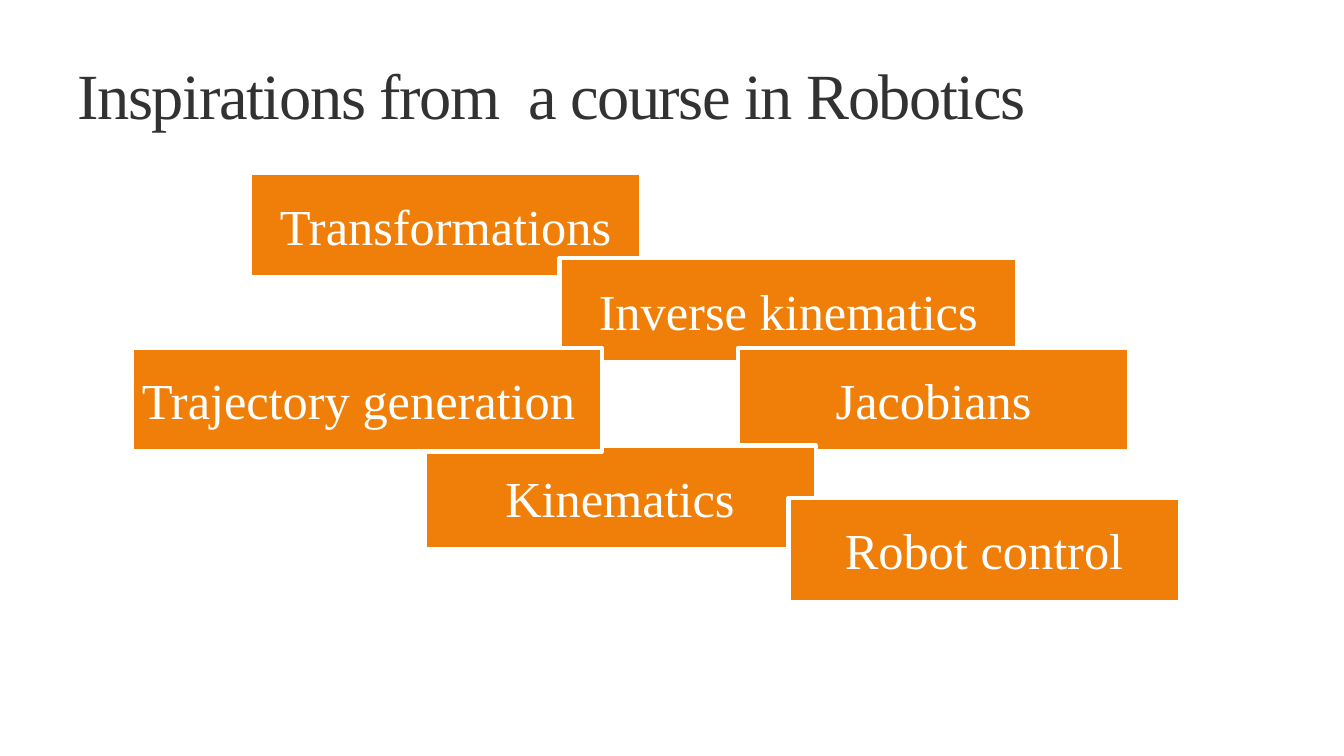
from pptx import Presentation
from pptx.dml.color import RGBColor
from pptx.enum.shapes import MSO_SHAPE
from pptx.enum.text import MSO_ANCHOR, PP_ALIGN
from pptx.util import Inches, Pt

COLORS = {"background": "FFFFFF", "title": "323232", "box": "F07F09", "light": "FFFFFF"}
BOX_WIDTH, BOX_HEIGHT = 3.88, 1.03

# Topic, left, top, width, alignment; later boxes overlap earlier ones
TOPICS = [
    ("Transformations", 2.48, 1.72, BOX_WIDTH, PP_ALIGN.CENTER),
    ("Inverse kinematics", 5.55, 2.56, 4.54, PP_ALIGN.CENTER),
    ("Jacobians", 7.32, 3.45, BOX_WIDTH, PP_ALIGN.CENTER),
    ("Kinematics", 4.21, 4.42, BOX_WIDTH, PP_ALIGN.CENTER),
    ("Trajectory generation", 1.31, 3.45, 4.66, PP_ALIGN.LEFT),
    ("Robot control", 7.82, 4.94, BOX_WIDTH, PP_ALIGN.CENTER),
]


def color(name):
    return RGBColor.from_string(COLORS[name])


class SlideBuilder:
    font_name = "Times New Roman"

    def __init__(self, slide):
        self.slide = slide
        background = slide.background.fill
        background.solid()
        background.fore_color.rgb = color("background")

    def add_text(self, shape, text, size, color_name, alignment):
        """Put one formatted line into the shape and return its run."""
        frame = shape.text_frame
        frame.word_wrap = True
        frame.vertical_anchor = MSO_ANCHOR.MIDDLE
        paragraph = frame.paragraphs[0]
        paragraph.alignment = alignment
        run = paragraph.add_run()
        run.text = text
        font_format = {"name": self.font_name, "size": Pt(size)}
        for attribute, value in font_format.items():
            setattr(run.font, attribute, value)
        run.font.color.rgb = color(color_name)
        return run

    def title(self, text, left, top, width, height):
        shape = self.slide.shapes.add_textbox(
            Inches(left), Inches(top), Inches(width), Inches(height))
        run = self.add_text(shape, text, 46, "title", PP_ALIGN.LEFT)
        run._r.get_or_add_rPr().set("spc", "-100")

    def topic_box(self, text, left, top, width, alignment):
        shape = self.slide.shapes.add_shape(
            MSO_SHAPE.RECTANGLE,
            Inches(left), Inches(top), Inches(width), Inches(BOX_HEIGHT))
        shape.shadow.inherit = False
        shape.fill.solid()
        shape.fill.fore_color.rgb = color("box")
        shape.line.color.rgb = color("light")
        shape.line.width = Pt(3)
        self.add_text(shape, text, 36, "light", alignment)


def main():
    presentation = Presentation()
    presentation.slide_width = Inches(13.33)
    presentation.slide_height = Inches(7.5)
    builder = SlideBuilder(presentation.slides.add_slide(presentation.slide_layouts[6]))
    builder.title("Inspirations from  a course in Robotics", 0.67, 0.3, 11.11, 1.25)
    for topic in TOPICS:
        builder.topic_box(*topic)
    presentation.save("out.pptx")


if __name__ == "__main__":
    main()
